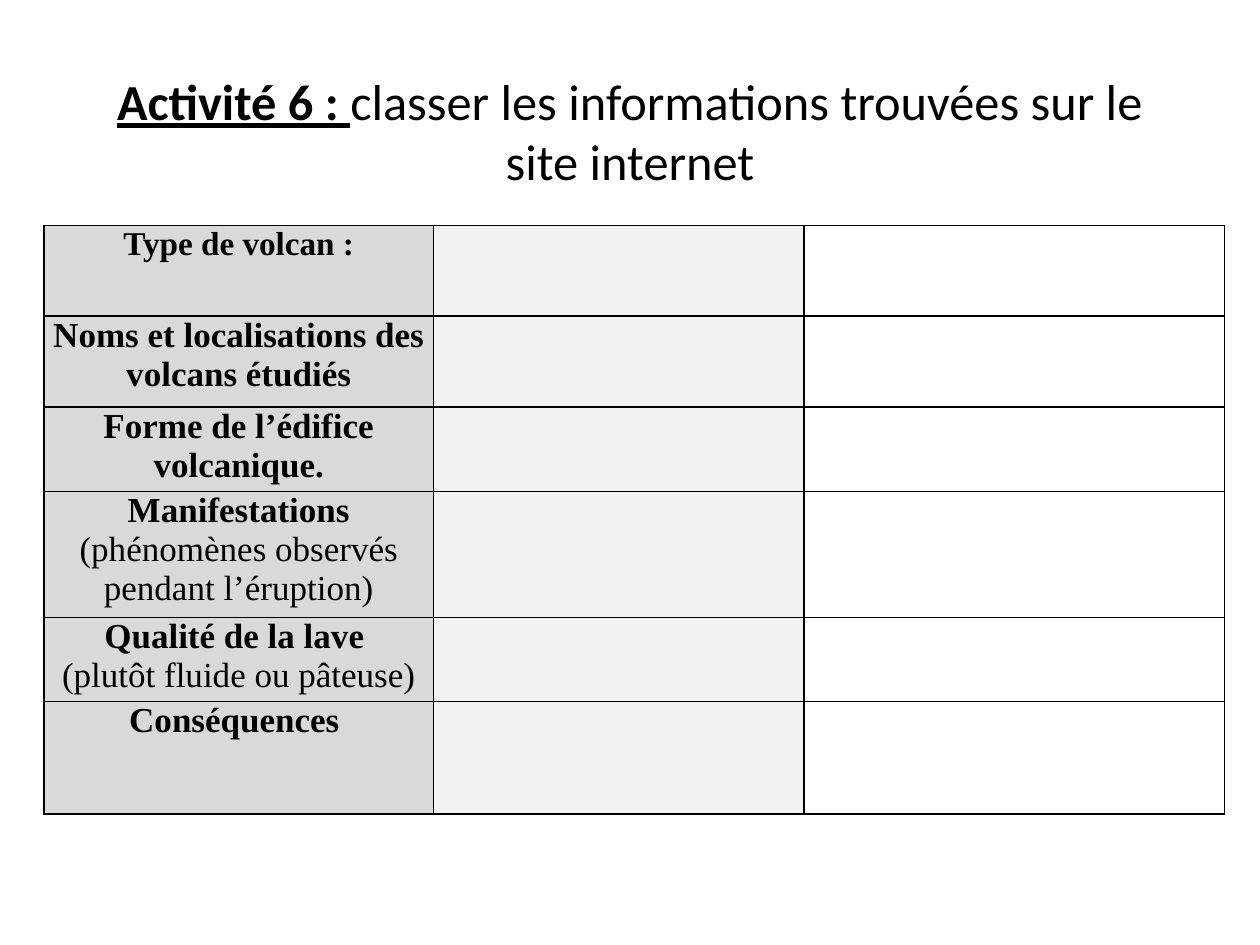
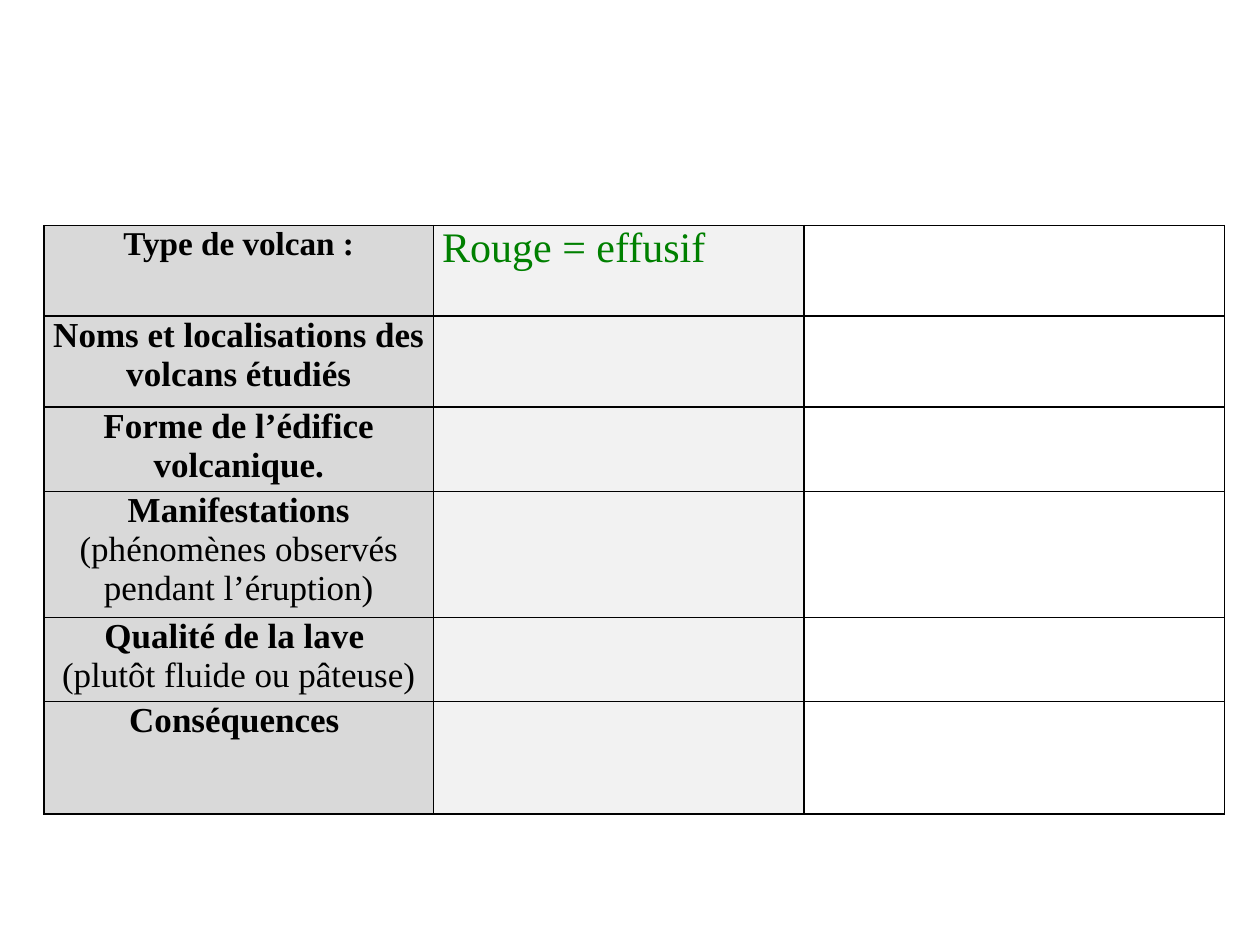
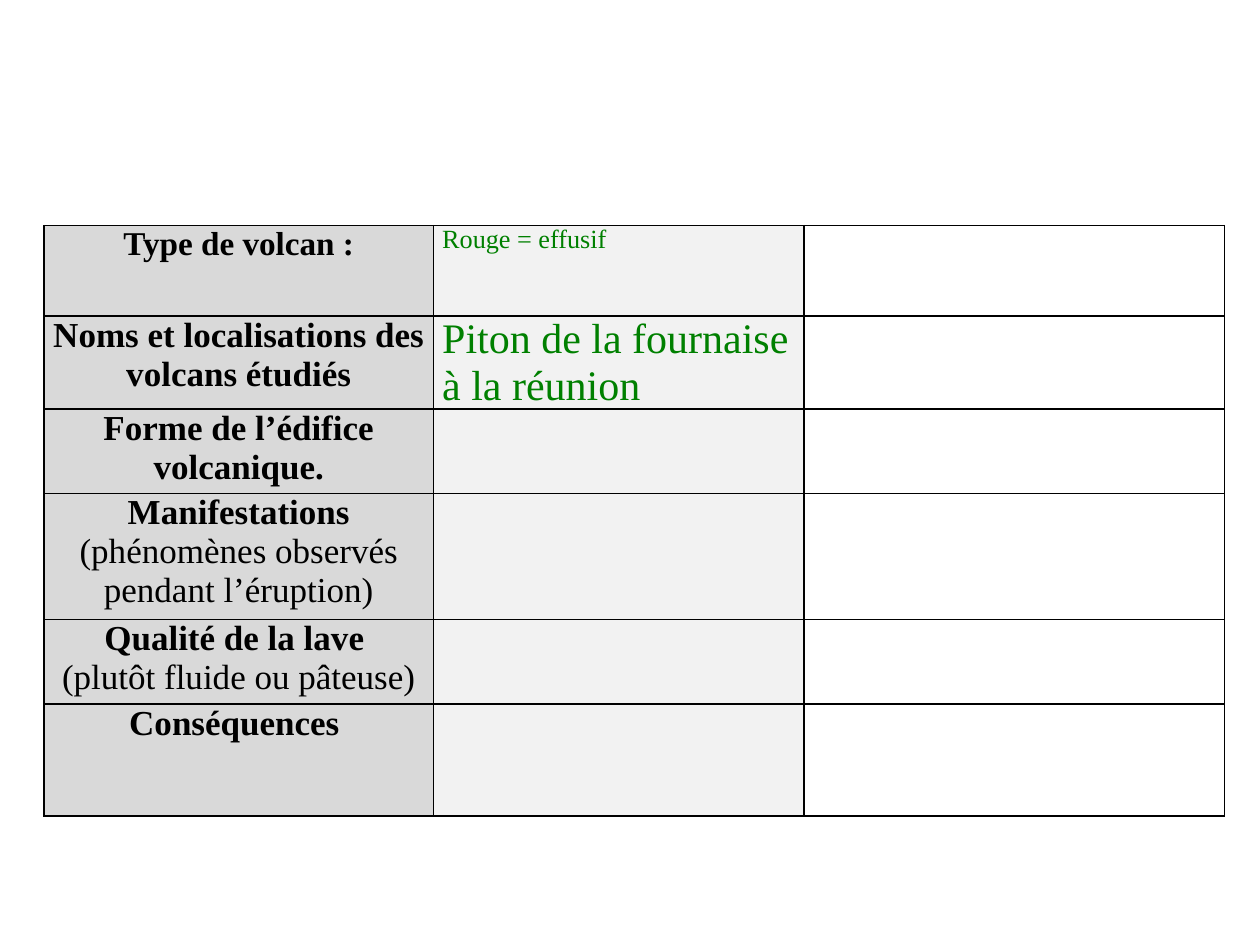
from lxml.etree import SubElement
from pptx import Presentation
from pptx.dml.color import RGBColor
from pptx.enum.text import MSO_ANCHOR, MSO_AUTO_SIZE, PP_ALIGN
from pptx.oxml.ns import qn
from pptx.util import Inches, Pt

# Content: a label is a list of paragraphs, each a list of (text, bold) runs
TITLE = [("Activité 6 : ", True),
         ("classer les informations trouvées sur le site internet", False)]
LABELS = [
    [[("Type de volcan :", True)]],
    [[("Noms et localisations des volcans étudiés", True)]],
    [[("Forme de l’édifice volcanique.", True)]],
    [[("Manifestations ", True), ("(phénomènes observés pendant l’éruption)", False)]],
    [[("Qualité de la lave ", True)], [("(plutôt fluide ou pâteuse)", False)]],
    [[("Conséquences ", True)]],
]
# One entry per slide: (title, {row: (answer, size)})
SLIDES = [
    (TITLE, {}),
    (None, {0: ("Rouge = effusif", 24)}),
    (None, {0: ("Rouge = effusif", 15),
            1: ("Piton de la fournaise à la réunion", 24)}),
]

# Shared look
BLACK, GREEN = "000000", "008000"
FILLS = ["D9D9D9", "F2F2F2", None]
TITLE_FONT, TABLE_FONT = "Calibri", "Times New Roman"
LABEL_SIZES = [19, 20, 20, 20, 20, 20]
COLS = [3.09, 2.94, 3.34]
ROWS = [0.72, 0.72, 0.67, 1, 0.67, 0.89]
TITLE_ONLY, BLANK = 5, 6


def rgb(color):
    return RGBColor.from_string(color)


def style(p, font, size, color, align):
    p.alignment = align
    p.font.name, p.font.size = font, Pt(size)
    p.font.color.rgb = rgb(color)


def add_runs(p, runs):
    for text, bold in runs:
        r = p.add_run()
        r.text, r.font.bold = text, bold


def add_borders(cell):
    tcPr = cell._tc.get_or_add_tcPr()
    for side in ("a:lnL", "a:lnR", "a:lnT", "a:lnB"):
        ln = SubElement(tcPr, qn(side), w=str(Pt(1)))
        SubElement(SubElement(ln, qn("a:solidFill")), qn("a:srgbClr"), val=BLACK)


def write_cell(cell, paragraphs, size, color, align):
    tf = cell.text_frame
    for i, runs in enumerate(paragraphs):
        p = tf.add_paragraph() if i else tf.paragraphs[0]
        style(p, TABLE_FONT, size, color, align)
        add_runs(p, runs)


def add_title(s, runs):
    sp = s.shapes.title
    sp.left, sp.top, sp.width, sp.height = map(Inches, (0.5, 0.52, 9, 1.03))
    tf = sp.text_frame
    tf.auto_size, tf.vertical_anchor = MSO_AUTO_SIZE.NONE, MSO_ANCHOR.MIDDLE
    p = tf.paragraphs[0]
    style(p, TITLE_FONT, 28.8, BLACK, PP_ALIGN.CENTER)
    add_runs(p, runs)
    p.runs[0].font.underline = True


def add_volcano_table(s, answers):
    table = s.shapes.add_table(len(ROWS), len(COLS), Inches(0.35), Inches(1.79),
                               Inches(sum(COLS)), Inches(sum(ROWS))).table
    table.first_row = table.horz_banding = False
    for column, width in zip(table.columns, COLS):
        column.width = Inches(width)
    for i, (row, height) in enumerate(zip(table.rows, ROWS)):
        row.height = Inches(height)
        for cell, fill in zip(row.cells, FILLS):
            cell.margin_left = cell.margin_right = Inches(0.07)
            cell.margin_top = cell.margin_bottom = 0
            add_borders(cell)
            if fill:
                cell.fill.solid()
                cell.fill.fore_color.rgb = rgb(fill)
            else:
                cell.fill.background()
        write_cell(row.cells[0], LABELS[i], LABEL_SIZES[i], BLACK, PP_ALIGN.CENTER)
        if i in answers:
            text, size = answers[i]
            write_cell(row.cells[1], [[(text, False)]], size, GREEN, PP_ALIGN.LEFT)


def main():
    prs = Presentation()
    prs.slide_width, prs.slide_height = Inches(10), Inches(7.5)
    for title, answers in SLIDES:
        s = prs.slides.add_slide(prs.slide_layouts[TITLE_ONLY if title else BLANK])
        if title:
            add_title(s, title)
        add_volcano_table(s, answers)
    prs.save("out.pptx")


if __name__ == "__main__":
    main()
